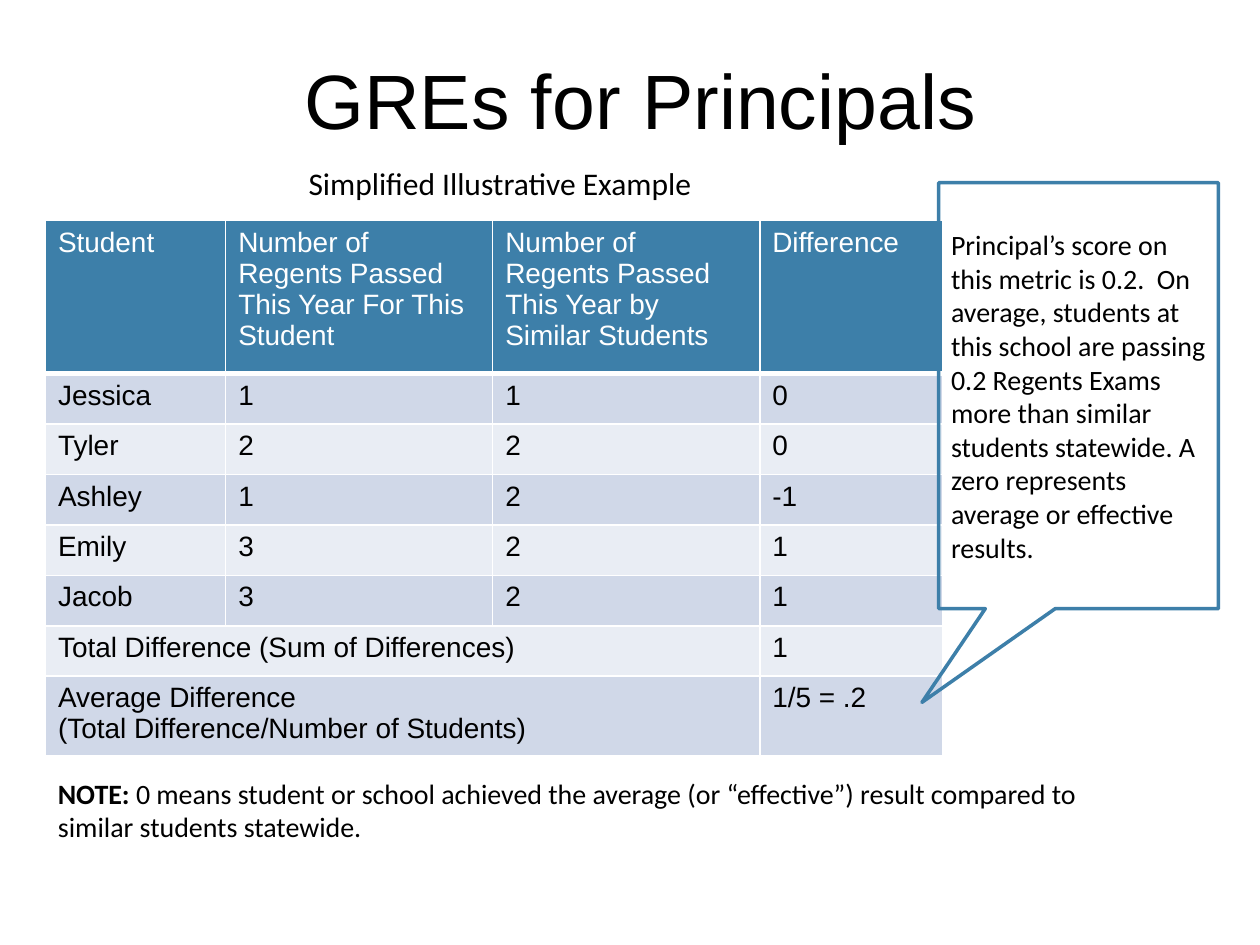
from lxml import etree
from pptx import Presentation
from pptx.dml.color import RGBColor
from pptx.enum.shapes import MSO_SHAPE
from pptx.enum.text import MSO_ANCHOR, MSO_AUTO_SIZE, PP_ALIGN
from pptx.oxml.ns import qn
from pptx.util import Pt

CALLOUT = MSO_SHAPE.RECTANGULAR_CALLOUT
CENTER, LEFT = PP_ALIGN.CENTER, PP_ALIGN.LEFT
TOP, MIDDLE, BOTTOM = MSO_ANCHOR.TOP, MSO_ANCHOR.MIDDLE, MSO_ANCHOR.BOTTOM
GROW = MSO_AUTO_SIZE.SHAPE_TO_FIT_TEXT

BLUE, BLACK, WHITE = "3D7FA9", "000000", "FFFFFF"
BANDS = ("D0D8E8", "E9EDF4")

TITLE = "GREs for Principals"
SUBTITLE = "Simplified Illustrative Example"
CALLOUT_TEXT = (
    "Principal’s score on this metric is 0.2.  On average, students at this school "
    "are passing 0.2 Regents Exams more than similar students statewide. "
    "A zero represents average or effective results."
)
NOTE = (
    "NOTE: ",
    "0 means student or school achieved the average (or “effective”) result "
    "compared to similar students statewide.",
)
HEADER = (
    "Student",
    "Number of Regents Passed This Year For This Student",
    "Number of Regents Passed This Year by Similar Students",
    "Difference",
)
STUDENTS = (
    ("Jessica", "1", "1", "0"),
    ("Tyler", "2", "2", "0"),
    ("Ashley", "1", "2", "-1"),
    ("Emily", "3", "2", "1"),
    ("Jacob", "3", "2", "1"),
)
SUMMARIES = (
    ("Total Difference (Sum of Differences)", "1"),
    ("Average Difference \v(Total Difference/Number of Students)", "1/5 = .2"),
)
COLUMN_WIDTHS = (103, 152.6, 152.6, 104.4)
ROW_HEIGHTS = (87.6, *[28.8] * 6, 43.2)


def color(value):
    return RGBColor.from_string(value)


def style_text(frame, font, size, text_color=BLACK, align=LEFT, anchor=TOP):
    frame.vertical_anchor = anchor
    for para in frame.paragraphs:
        para.alignment = align
        for span in para.runs:
            span.font.name = font
            span.font.size = Pt(size)
            span.font.color.rgb = color(text_color)


def add_text(page, place, spans, font, size, wrap=True, **style):
    box = page.shapes.add_textbox(*map(Pt, place))
    frame = box.text_frame
    frame.word_wrap = wrap
    for text in spans:
        frame.paragraphs[0].add_run().text = text
    style_text(frame, font, size, **style)
    return frame


def set_borders(cell, bottom_width):
    properties = cell._tc.get_or_add_tcPr()
    widths = {"lnL": 1, "lnR": 1, "lnT": 1, "lnB": bottom_width}
    for position, (side, width) in enumerate(widths.items()):
        line = etree.Element(qn(f"a:{side}"), w=str(Pt(width)))
        fill = etree.SubElement(line, qn("a:solidFill"))
        etree.SubElement(fill, qn("a:srgbClr"), val=WHITE)
        properties.insert(position, line)


def add_scores(page):
    summary_rows = [(label, "", "", value) for label, value in SUMMARIES]
    rows = [HEADER, *STUDENTS, *summary_rows]
    place = (26, 126, sum(COLUMN_WIDTHS), sum(ROW_HEIGHTS))
    table = page.shapes.add_table(len(rows), len(HEADER), *map(Pt, place)).table
    for column, width in zip(table.columns, COLUMN_WIDTHS):
        column.width = Pt(width)
    for row, height in zip(table.rows, ROW_HEIGHTS):
        row.height = Pt(height)
    for r, values in enumerate(rows):
        is_header = r == 0
        for c, value in enumerate(values):
            cell = table.cell(r, c)
            cell.text_frame.text = value
            style_text(cell.text_frame, "Arial", 16, WHITE if is_header else BLACK)
            cell.fill.solid()
            cell.fill.fore_color.rgb = color(BLUE if is_header else BANDS[(r - 1) % 2])
            set_borders(cell, 3 if is_header else 1)
        if r > len(STUDENTS):
            table.cell(r, 0).merge(table.cell(r, 2))


def add_callout(page):
    callout = page.shapes.add_shape(CALLOUT, *map(Pt, (536.4, 104.4, 159.8, 243.4)))
    callout.shadow.inherit = False
    callout.adjustments[0] = -0.56
    callout.adjustments[1] = 0.72
    callout.fill.background()
    callout.line.color.rgb = color(BLUE)
    callout.line.width = Pt(2)
    callout.text_frame.word_wrap = True
    callout.text_frame.text = CALLOUT_TEXT
    style_text(callout.text_frame, "Calibri", 16, anchor=MIDDLE)


def main():
    """Build the slide on principals' scores and save it."""
    deck = Presentation()
    deck.slide_width, deck.slide_height = Pt(720), Pt(540)
    page = deck.slides.add_slide(deck.slide_layouts[6])

    title = add_text(page, (62.6, 19.4, 607, 67), [TITLE], "Arial", 44,
                     align=CENTER, anchor=BOTTOM)
    title.paragraphs[0].line_spacing = Pt(36)
    add_scores(page)
    add_callout(page)
    subtitle = add_text(page, (169.2, 90, 255.6, 29), [SUBTITLE], "Calibri", 18, wrap=False)
    subtitle.auto_size = GROW
    note = add_text(page, (26, 440, 642.2, 46), NOTE, "Calibri", 16)
    note.auto_size = GROW
    note.paragraphs[0].runs[0].font.bold = True

    deck.save("out.pptx")


if __name__ == "__main__":
    main()
